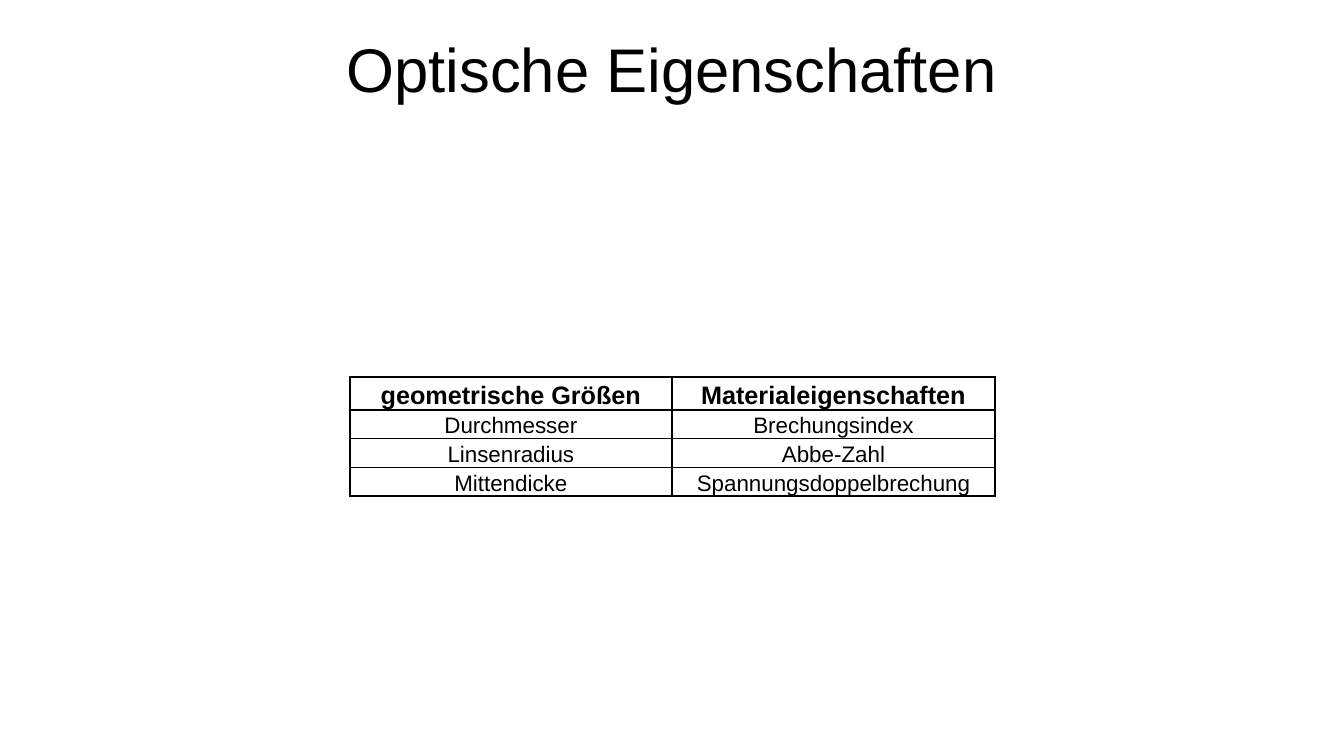
import dataclasses

import lxml.etree
import pptx
import pptx.dml.color
import pptx.enum.text
import pptx.oxml.ns
import pptx.util

Cm = pptx.util.Cm
Pt = pptx.util.Pt


@dataclasses.dataclass(frozen=True)
class Theme:
    """Colours, font and sizes of the slide."""
    font: str = "Arial"
    ink: str = "000000"
    title: int = 44
    header: int = 18
    body: int = 16
    thick: float = 1.5
    thin: float = 1


THEME = Theme()
ROWS = [
    ("geometrische Größen", "Materialeigenschaften"),
    ("Durchmesser", "Brechungsindex"),
    ("Linsenradius", "Abbe-Zahl"),
    ("Mittendicke", "Spannungsdoppelbrechung"),
]


def format_paragraph(p, size, spacing, bold=False):
    """Centre a paragraph and style its runs."""
    p.alignment = pptx.enum.text.PP_ALIGN.CENTER
    p.line_spacing = spacing
    for r in p.runs:
        r.font.name = THEME.font
        r.font.size = Pt(size)
        r.font.bold = bold
        r.font.color.rgb = pptx.dml.color.RGBColor.from_string(THEME.ink)


def set_border(cell, side, width):
    """Draw one side of a table cell as a solid line."""
    qn = pptx.oxml.ns.qn
    tcPr = cell._tc.get_or_add_tcPr()
    ln = lxml.etree.SubElement(tcPr, qn(f"a:ln{side}"), w=str(Pt(width)))
    fill = lxml.etree.SubElement(ln, qn("a:solidFill"))
    lxml.etree.SubElement(fill, qn("a:srgbClr"), val=THEME.ink)


def add_title(s, text, left, top, width, height):
    """Place the title placeholder in the given box."""
    sp = s.shapes.title
    sp.left, sp.top, sp.width, sp.height = left, top, width, height
    tf = sp.text_frame
    tf.text = text
    tf.vertical_anchor = pptx.enum.text.MSO_ANCHOR.MIDDLE
    format_paragraph(tf.paragraphs[0], THEME.title, 0.9)


def add_property_table(s, rows, left, top, width, height):
    """Place the bordered table of properties in the given box."""
    table = s.shapes.add_table(len(rows), len(rows[0]), left, top, width, height).table
    table.first_row = table.horz_banding = False
    last = len(rows) - 1
    for i, texts in enumerate(rows):
        table.rows[i].height = Cm(0.72 if i else 0.83)
        upper = THEME.thin if i > 1 else THEME.thick
        lower = THEME.thin if 0 < i < last else THEME.thick
        borders = {"L": THEME.thick, "R": THEME.thick, "T": upper, "B": lower}
        for cell, text in zip(table.rows[i].cells, texts):
            cell.margin_left = cell.margin_right = Cm(0.18)
            cell.margin_top = cell.margin_bottom = 0
            cell.text_frame.text = text
            size = THEME.body if i else THEME.header
            format_paragraph(cell.text_frame.paragraphs[0], size, 1.15, i == 0)
            for side, line in borders.items():
                set_border(cell, side, line)
            cell.fill.background()


def main():
    """Build the slide and save it."""
    prs = pptx.Presentation()
    prs.slide_width, prs.slide_height = Cm(33.87), Cm(19.05)
    s = prs.slides.add_slide(prs.slide_layouts[5])
    add_title(s, "Optische Eigenschaften", 0, 0, prs.slide_width, Cm(3.68))
    add_property_table(s, ROWS, Cm(8.81), Cm(9.5), Cm(16.26), Cm(3))
    prs.save("out.pptx")


if __name__ == "__main__":
    main()
